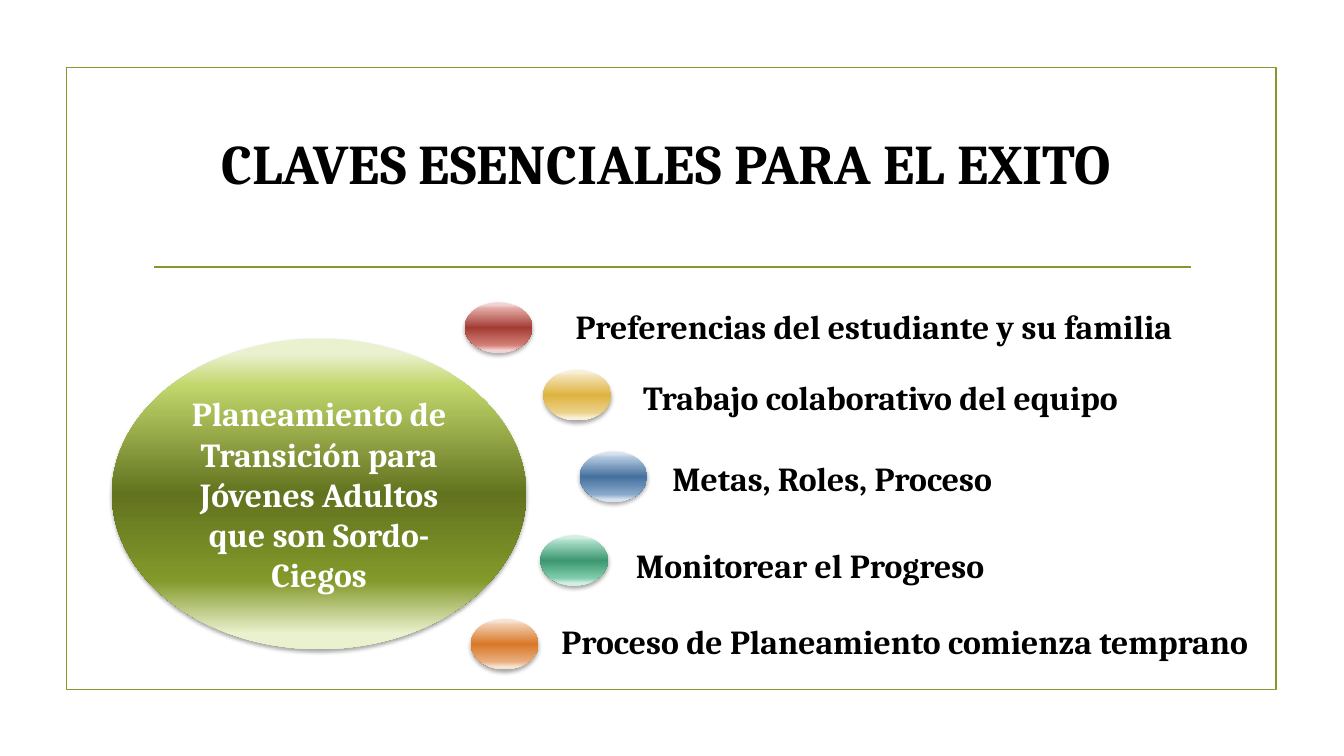
from lxml import etree
from pptx import Presentation
from pptx.dml.color import RGBColor
from pptx.enum import shapes, text
from pptx.oxml import ns
from pptx.util import Inches, Pt

COLORS = {"frame": "83992A", "black": "000000", "white": "FFFFFF"}
# Gradient stops as (percent, colour), from top to bottom
GRADIENTS = {
    "olive": [(5, "EAF1CE"), (15, "C1D66B"), (50, "62731F"), (78, "83992A"), (95, "EAF1CE")],
    "red": [(5, "F1D4D2"), (12, "E3AAA5"), (50, "A23C33"), (85, "D47F77"), (95, "F1D4D2")],
    "yellow": [(5, "F8F0D9"), (12, "F2E1B3"), (50, "DEB340"), (85, "EBD18C"), (95, "F8F0D9")],
    "blue": [(5, "D7E2EE"), (12, "AFC6DD"), (50, "44709D"), (85, "88A9CB"), (95, "D7E2EE")],
    "green": [(5, "D4EEE3"), (12, "A9DDC7"), (50, "3C9770"), (85, "7FCCAB"), (95, "D4EEE3")],
    "orange": [(5, "F7E4D4"), (12, "F0C9A9"), (50, "D97828"), (85, "E8AE7E"), (95, "F7E4D4")],
}
# Key, gradient, bead left and top, label left, top and width (within the keys region)
KEYS = [
    ("Preferencias del estudiante y su familia", "red", 0, 0.01, 1, 0, 6.56),
    ("Trabajo colaborativo del equipo", "yellow", 0.78, 0.68, 1.67, 0.7, 5.26),
    ("Metas, Roles, Proceso", "blue", 1.14, 1.49, 1.96, 1.5, 5.26),
    ("Monitorear el Progreso", "green", 0.75, 2.32, 1.6, 2.37, 5.26),
    ("Proceso de Planeamiento comienza temprano", "orange", 0.06, 3.15, 0.86, 3.12, 7.55),
]
BEAD_WIDTH, BEAD_HEIGHT = 0.67, 0.5
LABEL_HEIGHT = 0.51


def rgb(name):
    return RGBColor.from_string(COLORS[name])


def add_child(parent, tag, **attributes):
    child = etree.SubElement(parent, ns.qn(tag))
    for name, value in attributes.items():
        child.set(name, str(value))
    return child


def write(shape, words, size, color, align, anchor):
    frame = shape.text_frame
    frame.word_wrap = True
    frame.vertical_anchor = anchor
    paragraph = frame.paragraphs[0]
    paragraph.alignment = align
    run = paragraph.add_run()
    run.text = words
    formats = {"name": "Cambria", "size": Pt(size), "bold": True}
    for name, value in formats.items():
        setattr(run.font, name, value)
    run.font.color.rgb = rgb(color)


def add_glossy_ellipse(slide, box, gradient):
    """Ellipse with a vertical gradient and a soft shadow below."""
    shape = slide.shapes.add_shape(shapes.MSO_SHAPE.OVAL, *map(Inches, box))
    shape.line.fill.background()
    shape.fill.gradient()
    shape.fill.gradient_angle = 270
    properties = shape._element.spPr
    stops = properties.find(".//" + ns.qn("a:gsLst"))
    for stop in list(stops):
        stops.remove(stop)
    for percent, color in GRADIENTS[gradient]:
        stop = add_child(stops, "a:gs", pos=percent * 1000)
        add_child(stop, "a:srgbClr", val=color)
    shape.shadow.inherit = False
    effects = properties.find(ns.qn("a:effectLst"))
    shadow = add_child(effects, "a:outerShdw", blurRad=Pt(3.1), dist=Pt(1.8),
                       dir=5400000, algn="ctr", rotWithShape=0)
    color = add_child(shadow, "a:srgbClr", val=COLORS["black"])
    add_child(color, "a:alpha", val=35000)
    return shape


def add_frame(slide, left, top, width, height):
    """Border with a rule below the title area."""
    border = slide.shapes.add_shape(
        shapes.MSO_SHAPE.RECTANGLE, *map(Inches, (left, top, width, height)))
    border.shadow.inherit = False
    border.fill.background()
    ends = (left + 0.87, top + 1.98, left + 11.15, top + 1.98)
    rule = slide.shapes.add_connector(shapes.MSO_CONNECTOR.STRAIGHT, *map(Inches, ends))
    add_child(rule._element.spPr, "a:effectLst")
    for shape in (border, rule):
        shape.line.color.rgb = rgb("frame")
        shape.line.width = Pt(1.25)


def add_title(slide, *box):
    title = slide.shapes.add_textbox(*map(Inches, box))
    write(title, "CLAVES ESENCIALES PARA EL EXITO", 40, "black",
          text.PP_ALIGN.CENTER, text.MSO_ANCHOR.MIDDLE)


def add_topic(slide, *box):
    topic = add_glossy_ellipse(slide, box, "olive")
    write(topic, "Planeamiento de Transición para Jóvenes Adultos que son Sordo- Ciegos",
          24, "white", text.PP_ALIGN.CENTER, text.MSO_ANCHOR.MIDDLE)


def add_keys(slide, left, top):
    """Arc of coloured beads, each with its label."""
    for words, gradient, bead_x, bead_y, label_x, label_y, label_width in KEYS:
        add_glossy_ellipse(
            slide, (left + bead_x, top + bead_y, BEAD_WIDTH, BEAD_HEIGHT), gradient)
        label_box = (left + label_x, top + label_y, label_width, LABEL_HEIGHT)
        label = slide.shapes.add_textbox(*map(Inches, label_box))
        write(label, words, 24, "black", text.PP_ALIGN.LEFT, text.MSO_ANCHOR.TOP)


def main():
    presentation = Presentation()
    presentation.slide_width = Inches(13.33)
    presentation.slide_height = Inches(7.5)
    slide = presentation.slides.add_slide(presentation.slide_layouts[6])
    add_frame(slide, 0.66, 0.67, 12, 6.17)
    add_title(slide, 0.94, 1.11, 11.33, 1)
    add_topic(slide, 1.11, 3.36, 4.11, 3.08)
    add_keys(slide, 4.61, 2.99)
    presentation.save("out.pptx")


if __name__ == "__main__":
    main()
